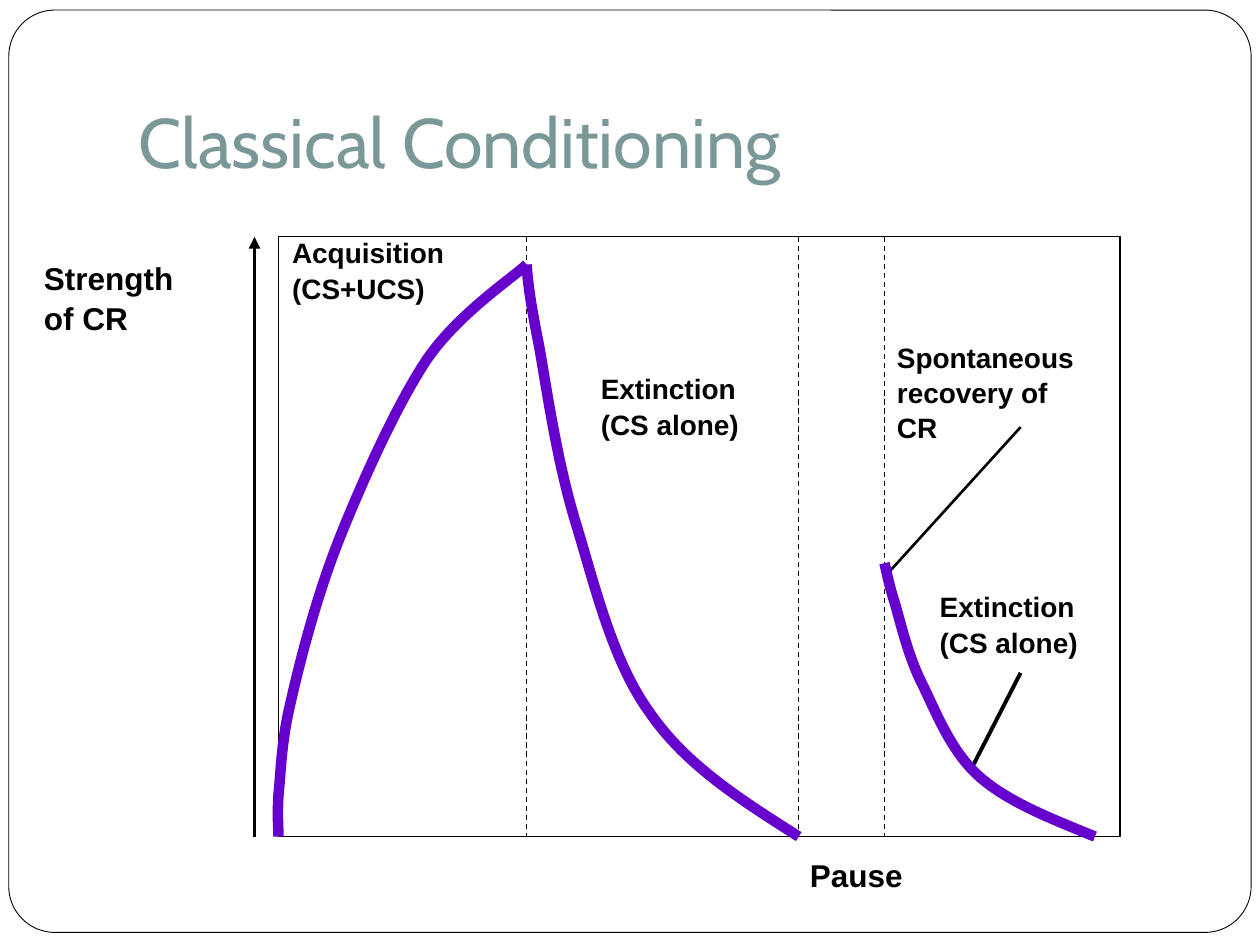
from lxml.etree import SubElement
from pptx import Presentation
from pptx.dml.color import RGBColor
from pptx.enum.dml import MSO_LINE
from pptx.enum.shapes import MSO_CONNECTOR, MSO_SHAPE
from pptx.enum.text import MSO_ANCHOR, PP_ALIGN
from pptx.oxml.ns import qn
from pptx.util import Inches, Pt

BLACK, WHITE, PURPLE, TEAL = "000000", "FFFFFF", "6600CC", "7B9899"

RISE = [(0, 4.76), (0, 4.68), (-0.01, 4.61), (0, 4.43),
        (0.02, 4.25), (0.02, 4.01), (0.1, 3.68),
        (0.18, 3.33), (0.31, 2.83), (0.49, 2.38),
        (0.67, 1.93), (0.94, 1.33), (1.18, 0.97),
        (1.43, 0.61), (1.84, 0.34), (1.97, 0.22)]
FALL = [(1.97, 0.22), (1.98, 0.37), (2, 0.52), (2.07, 0.87),
        (2.13, 1.21), (2.21, 1.78), (2.36, 2.27),
        (2.51, 2.76), (2.65, 3.37), (2.95, 3.78),
        (3.24, 4.2), (3.69, 4.48), (4.13, 4.76)]
RETURN = [(4.81, 2.59), (4.83, 2.67), (4.84, 2.74), (4.89, 2.9),
          (4.94, 3.07), (5, 3.34), (5.12, 3.57),
          (5.23, 3.8), (5.35, 4.1), (5.57, 4.29),
          (5.8, 4.49), (6.14, 4.62), (6.48, 4.76)]
LABELS = [("Strength\nof CR", -1.96, 0.11, 1.45, 0.91, 18),
          ("Pause", 4.12, 4.85, 1.1, 0.52, 18),
          ("Acquisition\n(CS+UCS)", 0.01, -0.07, 1.66, 0.82, 16),
          ("Extinction\n(CS alone)", 2.46, 1.01, 1.53, 0.82, 16),
          ("Extinction\n(CS alone)", 5.15, 2.74, 1.53, 0.82, 16),
          ("Spontaneous\nrecovery of\nCR", 4.81, 0.76, 1.89, 1.17, 16)]


def color(code):
    return RGBColor.from_string(code)


def stroke(shape, code, width):
    shape.line.color.rgb = color(code)
    shape.line.width = Pt(width)


def panel(slide, kind, box, width):
    shape = slide.shapes.add_shape(kind, *map(Inches, box))
    shape.shadow.inherit = False
    shape.fill.solid()
    shape.fill.fore_color.rgb = color(WHITE)
    stroke(shape, BLACK, width)
    return shape


def rule(slide, start, end, width):
    line = slide.shapes.add_connector(
        MSO_CONNECTOR.STRAIGHT, *map(Inches, (*start, *end)))
    stroke(line, BLACK, width)
    SubElement(line._element.spPr, qn("a:effectLst"))
    return line


def curve(slide, left, top, points):
    spots = [(Inches(left + x), Inches(top + y)) for x, y in points]
    pen = slide.shapes.build_freeform(*spots[0])
    pen.add_line_segments(spots[1:], close=False)
    shape = pen.convert_to_shape()
    shape.shadow.inherit = False
    shape.fill.background()
    stroke(shape, PURPLE, 6)
    steps = list(shape._element.iter(qn("a:lnTo")))
    route = steps[0].getparent()
    for i in range(0, len(steps), 3):
        bend = SubElement(route, qn("a:cubicBezTo"))
        for step in steps[i:i + 3]:
            bend.append(step[0])
            route.remove(step)


def label(slide, text, box, size):
    frame = slide.shapes.add_textbox(*map(Inches, box)).text_frame
    frame.word_wrap = True
    frame.text = text
    for para in frame.paragraphs:
        para.line_spacing = 1.05
        para.font.name = "Arial"
        para.font.size = Pt(size)
        para.font.bold = True
        para.font.color.rgb = color(BLACK)


def border(slide, box):
    shape = panel(slide, MSO_SHAPE.ROUNDED_RECTANGLE, box, 0.5)
    shape.adjustments[0] = 0.05
    tree = shape._element.getparent()
    tree.insert(2, shape._element)


def heading(slide, text, box):
    title = slide.shapes.title
    title.left, title.top, title.width, title.height = map(Inches, box)
    frame = title.text_frame
    frame.text = text
    frame.vertical_anchor = MSO_ANCHOR.BOTTOM
    frame.margin_bottom = Inches(0.1)
    para = frame.paragraphs[0]
    para.alignment = PP_ALIGN.LEFT
    para.font.name = "Cabin"
    para.font.size = Pt(40)
    para.font.color.rgb = color(TEAL)


def graph(slide, box):
    left, top, width, height = box
    base = top + height
    panel(slide, MSO_SHAPE.RECTANGLE, box, 0.75)

    axis = rule(slide, (left - 0.19, top), (left - 0.19, base), 2.25)
    SubElement(axis.line._get_or_add_ln(), qn("a:headEnd"), type="triangle")

    for x in (1.97, 4.13, 4.81):
        mark = rule(slide, (left + x, top), (left + x, base), 0.75)
        mark.line.dash_style = MSO_LINE.DASH

    for start, end, weight in (((5.89, 3.46), (5.5, 4.22), 2.25),
                               ((5.89, 1.51), (4.81, 2.7), 1.5)):
        rule(slide, (left + start[0], top + start[1]),
             (left + end[0], top + end[1]), weight)

    for points in (RISE, FALL, RETURN):
        curve(slide, left, top, points)

    for text, x, y, w, h, size in LABELS:
        label(slide, text, (left + x, top + y, w, h), size)


def main():
    deck = Presentation()
    deck.slide_width, deck.slide_height = Inches(10), Inches(7.5)
    slide = deck.slides.add_slide(deck.slide_layouts[5])
    border(slide, (0.07, 0.08, 9.86, 7.32))
    heading(slide, "Classical Conditioning", (1, 0.3, 8.5, 1.25))
    graph(slide, (2.21, 1.88, 6.68, 4.76))
    deck.save("out.pptx")


if __name__ == "__main__":
    main()
